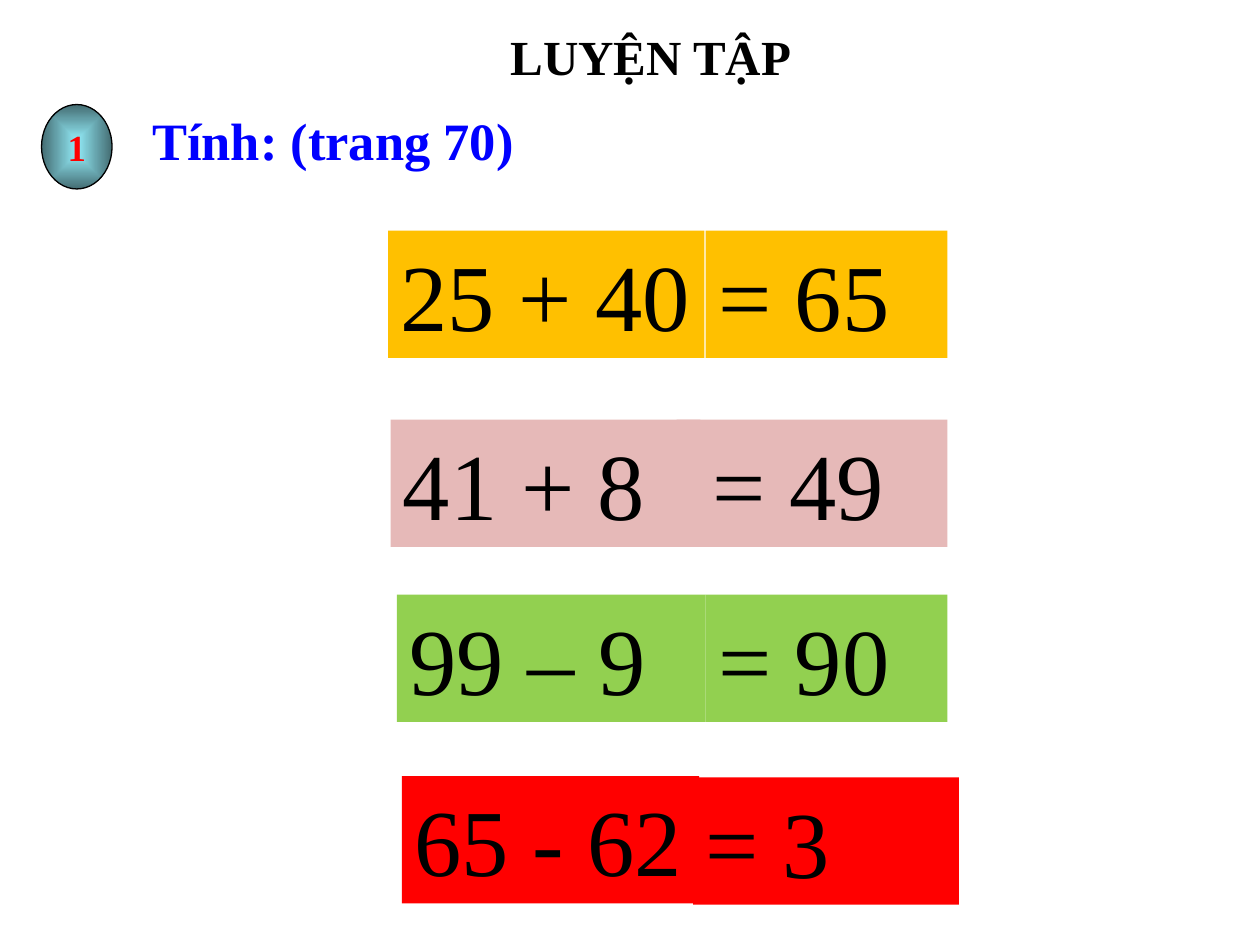
import pptx
import pptx.util
import pptx.dml.color
import pptx.enum.shapes
import pptx.enum.text
import pptx.oxml
from pptx.util import Inches

RGBColor = pptx.dml.color.RGBColor
BLACK = RGBColor(0x00, 0x00, 0x00)
WHITE = RGBColor(0xFF, 0xFF, 0xFF)
RED = RGBColor(0xFF, 0x00, 0x00)
BLUE = RGBColor(0x00, 0x00, 0xFF)
AMBER = RGBColor(0xFF, 0xC0, 0x00)
PINK = RGBColor(0xE6, 0xB9, 0xB8)
GREEN = RGBColor(0x92, 0xD0, 0x50)
AQUA = RGBColor(0x92, 0xEA, 0xF6)
TEAL = RGBColor(0x44, 0x6C, 0x72)

SHAPES = pptx.enum.shapes.MSO_SHAPE
ALIGN = pptx.enum.text.PP_ALIGN
ANCHOR = pptx.enum.text.MSO_ANCHOR


def write(shape, text, size, color=BLACK, bold=False, align=ALIGN.LEFT,
          anchor=ANCHOR.TOP, wrap=True, before=0):
    frame = shape.text_frame
    frame.word_wrap = wrap
    frame.auto_size = pptx.enum.text.MSO_AUTO_SIZE.NONE
    frame.vertical_anchor = anchor
    paragraph = frame.paragraphs[0]
    paragraph.alignment = align
    paragraph.space_before = pptx.util.Pt(before)
    run = paragraph.add_run()
    run.text = text
    run.font.name = "Times New Roman"
    run.font.size = pptx.util.Pt(size)
    run.font.bold = bold
    run.font.color.rgb = color


prs = pptx.Presentation()
prs.slide_width, prs.slide_height = Inches(10), Inches(7.5)
slide = prs.slides.add_slide(prs.slide_layouts[5])
slide.background.fill.solid()
slide.background.fill.fore_color.rgb = WHITE

# Lesson title
title = slide.shapes.title
title.left, title.top = Inches(0.5), Inches(0.16)
title.width, title.height = Inches(9.33), Inches(0.57)
write(title, "LUYỆN TẬP", size=28, bold=True, align=ALIGN.CENTER)

# Exercise number on a disc that is lightest in the middle
number = slide.shapes.add_shape(
    SHAPES.OVAL, Inches(0.33), Inches(0.83), Inches(0.56), Inches(0.67))
number.shadow.inherit = False
number.fill.gradient()
for stop, color, position in zip(number.fill.gradient_stops, (AQUA, TEAL), (0, 1)):
    stop.color.rgb = color
    stop.position = position
linear = number.fill._xPr.find(".//" + pptx.oxml.ns.qn("a:lin"))
linear.getparent().replace(linear, pptx.oxml.parse_xml(
    '<a:path xmlns:a="http://schemas.openxmlformats.org/drawingml/2006/main" path="shape">'
    '<a:fillToRect l="50000" t="50000" r="50000" b="50000"/></a:path>'))
number.line.color.rgb = BLACK
number.line.width = pptx.util.Pt(0.75)
write(number, "1", size=21, color=RED, bold=True, align=ALIGN.CENTER,
      anchor=ANCHOR.MIDDLE, wrap=False)

# Exercise instruction
instruction = slide.shapes.add_textbox(
    Inches(1.11), Inches(0.81), Inches(5.68), Inches(0.61))
write(instruction, "Tính: (trang 70)", size=30, color=BLUE, bold=True, before=3)

# Sums: each has a question and an answer (text, left, top, width)
sums = [
    (AMBER, ("25 + 40", 3.08, 1.83, 2.51), ("= 65", 5.6, 1.83, 1.92)),
    (PINK, ("41 + 8", 3.1, 3.33, 2.46), (" = 49", 5.37, 3.33, 2.15)),
    (GREEN, ("99 – 9", 3.15, 4.72, 2.45), ("= 90", 5.6, 4.72, 1.92)),
    (RED, ("65 - 62", 3.19, 6.16, 2.36), ("= 3", 5.5, 6.17, 2.11)),
]
for color, *parts in sums:
    for text, left, top, width in parts:
        panel = slide.shapes.add_shape(
            SHAPES.RECTANGLE, Inches(left), Inches(top), Inches(width), Inches(1.01))
        panel.shadow.inherit = False
        panel.fill.solid()
        panel.fill.fore_color.rgb = color
        panel.line.fill.background()
        write(panel, text, size=54, before=4)

prs.save("out.pptx")
